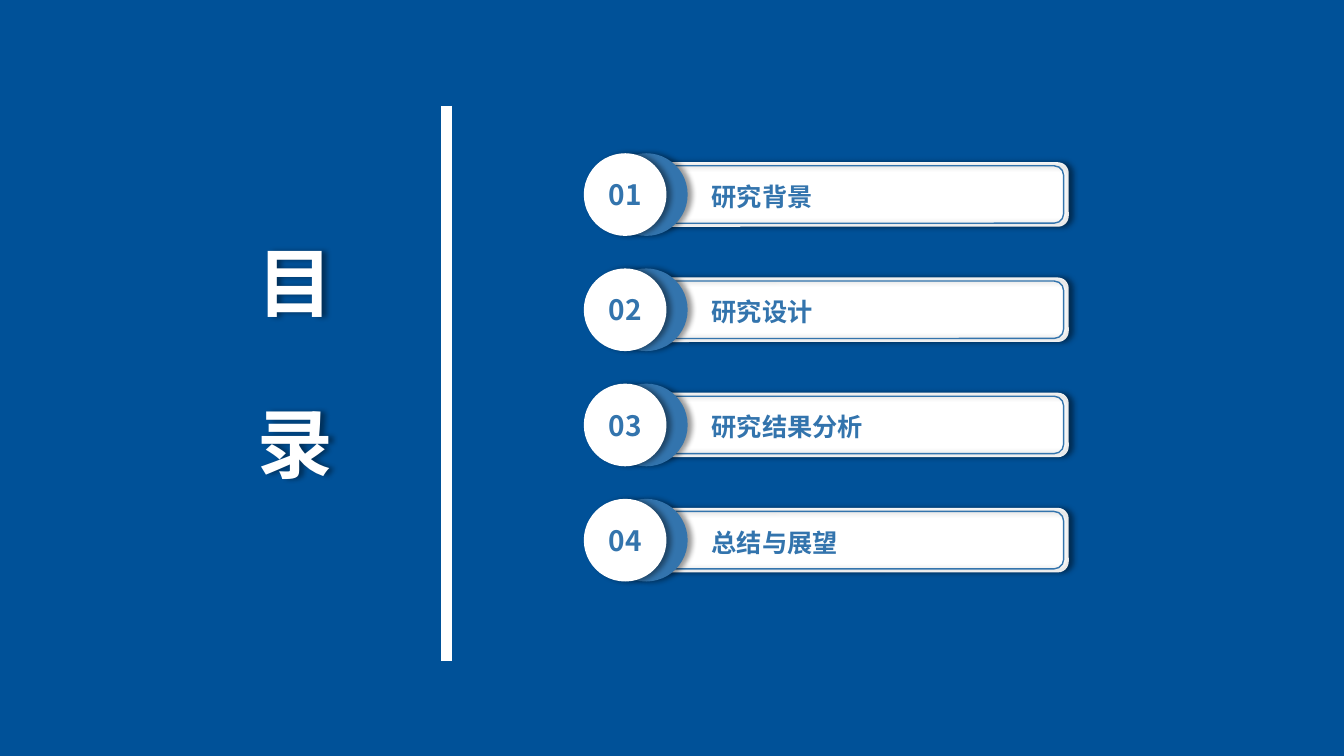
from lxml import etree
from pptx import Presentation
from pptx.dml.color import RGBColor
from pptx.enum.shapes import MSO_CONNECTOR, MSO_SHAPE
from pptx.enum.text import MSO_ANCHOR, MSO_AUTO_SIZE, PP_ALIGN
from pptx.oxml.ns import qn
from pptx.util import Inches, Pt

ROUNDED, OVAL = MSO_SHAPE.ROUNDED_RECTANGLE, MSO_SHAPE.OVAL
CENTER, LEFT = PP_ALIGN.CENTER, PP_ALIGN.LEFT
MIDDLE, TOP = MSO_ANCHOR.MIDDLE, MSO_ANCHOR.TOP

# Content
TITLE = ["目", "录"]
SECTIONS = [
    ("01", "研究背景"),
    ("02", "研究设计"),
    ("03", "研究结果分析"),
    ("04", "总结与展望"),
]

# Style and layout, in inches
FONT = "Noto Sans CJK SC"
COLORS = {"background": "005198", "accent": "3374AD", "white": "FFFFFF", "shadow": "000000"}
WIDTH, HEIGHT = 13.33, 7.5
FIRST_ROW, ROW_PITCH = 1.93, 1.143  # centre of the first row, step between rows
CIRCLE = 0.82
BAR_HEIGHT, OUTLINE_HEIGHT, LABEL_HEIGHT = 0.64, 0.57, 0.4
CHARACTER_WIDTH, LABEL_PADDING = 0.28, 0.59
DIVIDER_X, DIVIDER_TOP, DIVIDER_BOTTOM = 4.43, 1.05, 6.56


def color(name):
    return RGBColor.from_string(COLORS[name])


def add_shadow(shape):
    effects = etree.SubElement(shape._element.spPr, qn("a:effectLst"))
    outer = etree.SubElement(effects, qn("a:outerShdw"), blurRad=str(Pt(4)),
                             dist=str(Pt(3)), dir="0", algn="l", rotWithShape="0")
    shade = etree.SubElement(outer, qn("a:srgbClr"), val=COLORS["shadow"])
    etree.SubElement(shade, qn("a:alpha"), val="40000")


def write(shape, lines, size, ink, align=LEFT, anchor=TOP, gap=0):
    frame = shape.text_frame
    frame.vertical_anchor = anchor
    for index, line in enumerate(lines):
        paragraph = frame.paragraphs[0] if index == 0 else frame.add_paragraph()
        paragraph.alignment = align
        if index:
            paragraph.space_before = Pt(gap)
        run = paragraph.add_run()
        run.text = line
        run.font.size, run.font.bold, run.font.name = Pt(size), True, FONT
        run.font.color.rgb = color(ink)
        etree.SubElement(run.font._element, qn("a:ea"), typeface=FONT)


def add_text_box(slide, left, top, width, height, lines, **style):
    box = slide.shapes.add_textbox(*map(Inches, (left, top, width, height)))
    box.text_frame.word_wrap = True
    box.text_frame.auto_size = MSO_AUTO_SIZE.SHAPE_TO_FIT_TEXT
    write(box, lines, **style)
    return box


def add_panel(slide, kind, left, middle, width, height, fill=None, line=None):
    shape = slide.shapes.add_shape(
        kind, *map(Inches, (left, middle - height / 2, width, height)))
    if fill:
        shape.fill.solid()
        shape.fill.fore_color.rgb = color(fill)
    else:
        shape.fill.background()
    if line:
        shape.line.color.rgb = color(line)
        shape.line.width = Pt(1)
    else:
        shape.line.fill.background()
    add_shadow(shape)
    return shape


def add_section(slide, middle, number, label):
    add_panel(slide, ROUNDED, 6.09, middle, 4.51, BAR_HEIGHT, fill="white")
    add_text_box(slide, 6.96, middle - 0.18, len(label) * CHARACTER_WIDTH + LABEL_PADDING,
                 LABEL_HEIGHT, [label], size=18, ink="accent")
    add_panel(slide, ROUNDED, 6.61, middle, 3.94, OUTLINE_HEIGHT, line="accent")
    add_panel(slide, OVAL, 6, middle, CIRCLE, CIRCLE, fill="accent")
    badge = add_panel(slide, OVAL, 5.79, middle, CIRCLE, CIRCLE, fill="white")
    write(badge, [number], size=20, ink="accent", align=CENTER, anchor=MIDDLE)


def main():
    presentation = Presentation()
    presentation.slide_width, presentation.slide_height = Inches(WIDTH), Inches(HEIGHT)
    slide = presentation.slides.add_slide(presentation.slide_layouts[6])
    slide.background.fill.solid()
    slide.background.fill.fore_color.rgb = color("background")

    # Numbered sections
    for row, (number, label) in enumerate(SECTIONS):
        add_section(slide, FIRST_ROW + row * ROW_PITCH, number, label)

    # Title
    title = add_text_box(slide, 2.4, 2.29, 1.06, 2.83, TITLE,
                         size=54, ink="white", align=CENTER, gap=50)
    add_shadow(title)

    # Divider
    divider = slide.shapes.add_connector(
        MSO_CONNECTOR.STRAIGHT, *map(Inches, (DIVIDER_X, DIVIDER_TOP, DIVIDER_X, DIVIDER_BOTTOM)))
    divider.line.color.rgb = color("white")
    divider.line.width = Pt(7.5)
    etree.SubElement(divider._element.spPr, qn("a:effectLst"))

    presentation.save("out.pptx")


if __name__ == "__main__":
    main()
